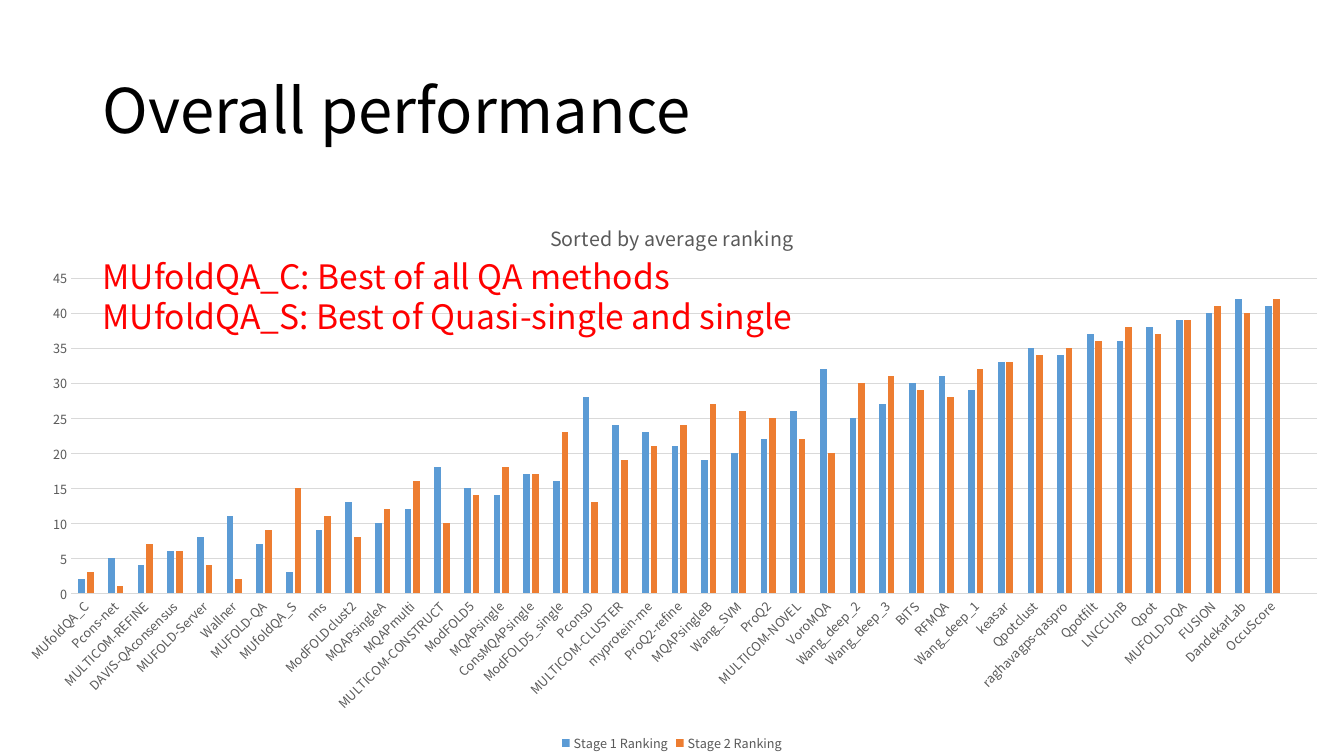
from pptx import Presentation
from pptx.chart.data import CategoryChartData
from pptx.dml.color import RGBColor
from pptx.enum.chart import XL_CHART_TYPE, XL_LEGEND_POSITION, XL_TICK_MARK
from pptx.enum.text import MSO_ANCHOR
from pptx.util import Inches, Pt

FONT = "Noto Sans CJK SC"
COLORS = {"black": "000000", "red": "FF0000", "gray": "595959",
          "grid": "D9D9D9", "blue": "5B9BD5", "orange": "ED7D31"}

# Method, stage 1 rank, stage 2 rank; the last slot stays empty
RANKS = [
    ("MUfoldQA_C", 2, 3), ("Pcons-net", 5, 1), ("MULTICOM-REFINE", 4, 7),
    ("DAVIS-QAconsensus", 6, 6), ("MUFOLD-Server", 8, 4), ("Wallner", 11, 2),
    ("MUFOLD-QA", 7, 9), ("MUfoldQA_S", 3, 15), ("nns", 9, 11),
    ("ModFOLDclust2", 13, 8), ("MQAPsingleA", 10, 12), ("MQAPmulti", 12, 16),
    ("MULTICOM-CONSTRUCT", 18, 10), ("ModFOLD5", 15, 14), ("MQAPsingle", 14, 18),
    ("ConsMQAPsingle", 17, 17), ("ModFOLD5_single", 16, 23), ("PconsD", 28, 13),
    ("MULTICOM-CLUSTER", 24, 19), ("myprotein-me", 23, 21), ("ProQ2-refine", 21, 24),
    ("MQAPsingleB", 19, 27), ("Wang_SVM", 20, 26), ("ProQ2", 22, 25),
    ("MULTICOM-NOVEL", 26, 22), ("VoroMQA", 32, 20), ("Wang_deep_2", 25, 30),
    ("Wang_deep_3", 27, 31), ("BITS", 30, 29), ("RFMQA", 31, 28),
    ("Wang_deep_1", 29, 32), ("keasar", 33, 33), ("Qpotclust", 35, 34),
    ("raghavagps-qaspro", 34, 35), ("Qpotfilt", 37, 36), ("LNCCUnB", 36, 38),
    ("Qpot", 38, 37), ("MUFOLD-DQA", 39, 39), ("FUSION", 40, 41),
    ("DandekarLab", 42, 40), ("OccuScore", 41, 42), ("", None, None),
]


def style(font, size, color):
    font.name = FONT
    font.size = Pt(size)
    font.bold = False
    font.color.rgb = RGBColor.from_string(COLORS[color])


def add_text(box, lines, size, color, spacing=None):
    """Add a wrapped text box with one paragraph per line."""
    frame = slide.shapes.add_textbox(*map(Inches, box)).text_frame
    frame.word_wrap = True
    for i, line in enumerate(lines):
        para = frame.add_paragraph() if i else frame.paragraphs[0]
        para.line_spacing = spacing
        run = para.add_run()
        run.text = line
        style(run.font, size, color)
    return frame


deck = Presentation()
deck.slide_width = Inches(13.33)
deck.slide_height = Inches(7.5)
slide = deck.slides.add_slide(deck.slide_layouts[6])

title = add_text((0.92, 0.4, 11.5, 1.45), ["Overall performance"], 44, "black", 0.9)
title.vertical_anchor = MSO_ANCHOR.MIDDLE

# Ranking chart
names, first, second = zip(*RANKS)
data = CategoryChartData()
data.categories = names
data.add_series("Stage 1 Ranking", first)
data.add_series("Stage 2 Ranking", second)
chart = slide.shapes.add_chart(
    XL_CHART_TYPE.COLUMN_CLUSTERED,
    Inches(0), Inches(2), Inches(13.33), Inches(5.5), data).chart
style(chart.font, 10, "black")

chart.has_title = True
head = chart.chart_title.text_frame.paragraphs[0].add_run()
head.text = "Sorted by average ranking"
style(head.font, 14, "gray")
chart.chart_title.include_in_layout = False

chart.has_legend = True
chart.legend.position = XL_LEGEND_POSITION.BOTTOM
chart.legend.include_in_layout = False
style(chart.legend.font, 9, "gray")

plot = chart.plots[0]
plot.gap_width = 219
plot.overlap = -27
plot.vary_by_categories = False
for series, color in zip(plot.series, ("blue", "orange")):
    series.format.fill.solid()
    series.format.fill.fore_color.rgb = RGBColor.from_string(COLORS[color])

cat_axis, val_axis = chart.category_axis, chart.value_axis
for axis in (cat_axis, val_axis):
    axis.major_tick_mark = axis.minor_tick_mark = XL_TICK_MARK.NONE
    style(axis.tick_labels.font, 9, "gray")
val_axis.minimum_scale, val_axis.maximum_scale = 0, 45
val_axis.major_unit = 5
val_axis.has_major_gridlines = True
val_axis.format.line.fill.background()
for line in (cat_axis.format.line, val_axis.major_gridlines.format.line):
    line.color.rgb = RGBColor.from_string(COLORS["grid"])
    line.width = Pt(0.75)
# Slant the method names by 45 degrees
cat_axis._element.txPr.bodyPr.set("rot", "-2700000")

add_text((0.92, 2.49, 7.56, 1.21),
         ["MUfoldQA_C: Best of all QA methods",
          "MUfoldQA_S: Best of Quasi-single and single"], 24, "red")

deck.save("out.pptx")
